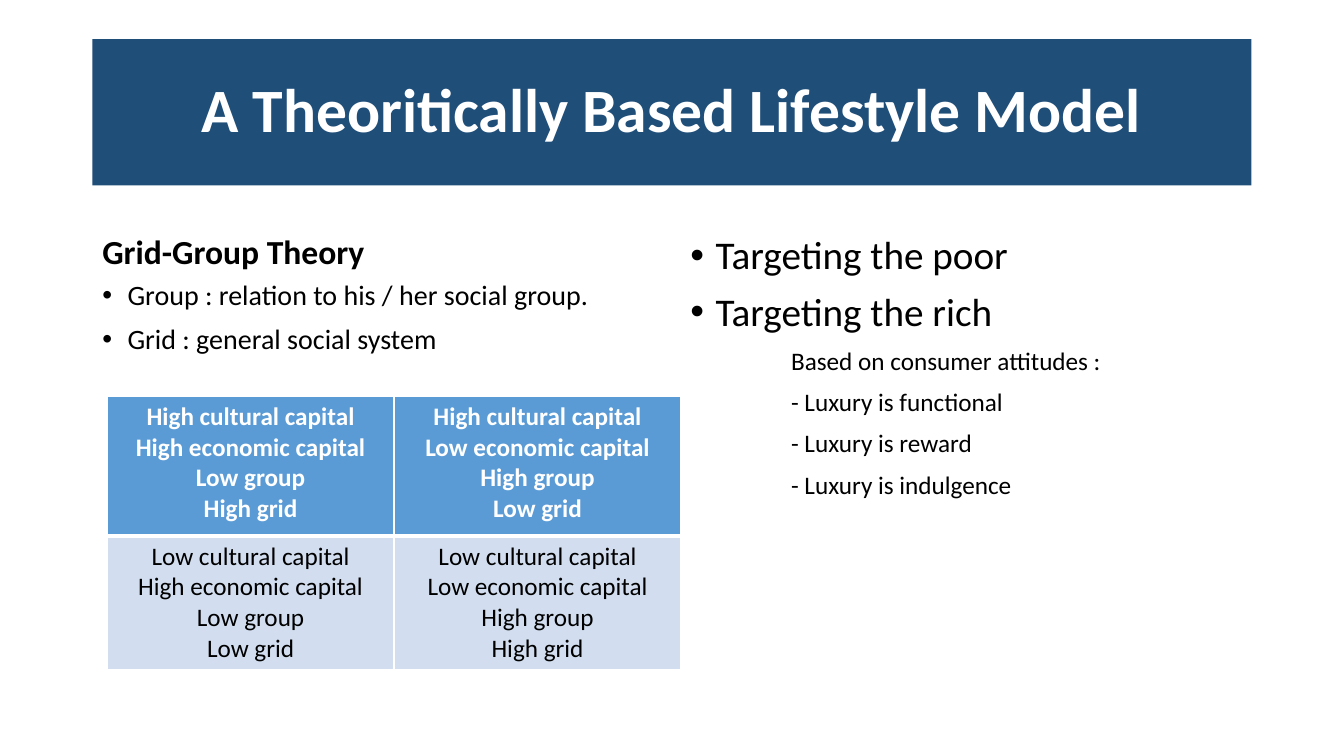
"""Build the lifestyle model slide."""
from dataclasses import dataclass
from typing import NamedTuple

from lxml.etree import SubElement
from pptx import Presentation
from pptx.dml.color import RGBColor
from pptx.enum.shapes import MSO_SHAPE
from pptx.enum.text import MSO_ANCHOR, PP_ALIGN
from pptx.oxml.ns import qn
from pptx.util import Pt


@dataclass(frozen=True)
class Theme:
    """Hold the colours and type sizes."""
    font: str = "Calibri"
    navy: str = "1F4E79"
    blue: str = "5B9BD5"
    pale: str = "D2DEEF"
    white: str = "FFFFFF"
    black: str = "000000"
    title: float = 44
    head: float = 24
    large: float = 28
    body: float = 20
    small: float = 18


class Box(NamedTuple):
    """Place a frame, in points."""
    left: float
    top: float
    width: float
    height: float


class Line(NamedTuple):
    """Describe one paragraph."""
    text: str
    size: float
    color: str = "000000"
    bold: bool = False
    bullet: bool = False
    margin: float = 0
    center: bool = False
    space: float = 10
    lead: float = 0.9


class Block(NamedTuple):
    """Describe one text box."""
    box: Box
    anchor: MSO_ANCHOR
    lines: list[Line]


class Quad(NamedTuple):
    """Describe one cell of the grid."""
    culture: str
    wealth: str
    group: str
    grid: str


THEME = Theme()
TITLE = Line("A Theoritically Based Lifestyle Model", THEME.title,
             THEME.white, True, center=True, space=0)
BANNER = Box(66, 28, 828, 104.5)
BLOCKS = [
    Block(Box(66, 132.5, 406, 65), MSO_ANCHOR.BOTTOM,
          [Line("Grid-Group Theory", THEME.head, bold=True)]),
    Block(Box(66, 197.5, 406, 70.5), MSO_ANCHOR.TOP,
          [Line(text, THEME.body, bullet=True) for text in (
              "Group : relation to his / her social group.",
              "Grid : general social system")]),
    Block(Box(486, 165, 408, 212.5), MSO_ANCHOR.TOP,
          [Line(text, THEME.large, bullet=True) for text in (
              "Targeting the poor", "Targeting the rich")]
          + [Line(text, THEME.small, margin=72) for text in (
              "Based on consumer attitudes :", "- Luxury is functional",
              "- Luxury is reward", "- Luxury is indulgence")]),
]
FRAME = Box(76.5, 283, 410, 195)
ROWS = (100, 95)
QUADS = [
    [Quad("High", "High", "Low", "High"), Quad("High", "Low", "High", "Low")],
    [Quad("Low", "High", "Low", "Low"), Quad("Low", "Low", "High", "High")],
]


def paint(item, color: str) -> None:
    """Give an item a solid fill."""
    item.fill.solid()
    item.fill.fore_color.rgb = RGBColor.from_string(color)


def write(frame, lines: list[Line]) -> None:
    """Write lines into a text frame."""
    frame.word_wrap = True
    for index, line in enumerate(lines):
        para = frame.paragraphs[0] if index == 0 else frame.add_paragraph()
        para.text = line.text
        para.alignment = PP_ALIGN.CENTER if line.center else PP_ALIGN.LEFT
        para.line_spacing = line.lead
        para.space_before = Pt(line.space)
        font = para.font
        font.name, font.size, font.bold = THEME.font, Pt(line.size), line.bold
        font.color.rgb = RGBColor.from_string(line.color)
        props = para._p.get_or_add_pPr()
        props.set("marL", str(Pt(18 if line.bullet else line.margin)))
        props.set("indent", str(Pt(-18 if line.bullet else 0)))
        if line.bullet:
            face = props.makeelement(qn("a:buFont"), {"typeface": "Arial"})
            mark = props.makeelement(qn("a:buChar"), {"char": "•"})
            props.find(qn("a:defRPr")).addprevious(face)
            face.addnext(mark)


def edge(cell, side: str, width: float) -> None:
    """Add a white border to one side of a cell."""
    line = SubElement(cell._tc.get_or_add_tcPr(), qn(f"a:ln{side}"),
                      w=str(Pt(width)))
    fill = SubElement(line, qn("a:solidFill"))
    SubElement(fill, qn("a:srgbClr"), val=THEME.white)


def banner(slide) -> None:
    """Draw the title band."""
    shape = slide.shapes.add_shape(MSO_SHAPE.RECTANGLE, *map(Pt, BANNER))
    shape.shadow.inherit = False
    paint(shape, THEME.navy)
    shape.line.fill.background()
    shape.text_frame.vertical_anchor = MSO_ANCHOR.MIDDLE
    write(shape.text_frame, [TITLE])


def place(slide, block: Block) -> None:
    """Draw one text box."""
    frame = slide.shapes.add_textbox(*map(Pt, block.box)).text_frame
    frame.vertical_anchor = block.anchor
    write(frame, block.lines)


def matrix(slide) -> None:
    """Draw the table of four groups."""
    table = slide.shapes.add_table(2, 2, *map(Pt, FRAME)).table
    table.horz_banding = False
    for row, quads in enumerate(QUADS):
        table.rows[row].height = Pt(ROWS[row])
        top = row == 0
        for col, quad in enumerate(quads):
            cell = table.cell(row, col)
            for side, width in zip("LRTB", (1, 1, 1, 3) if top else (1, 1, 3, 1)):
                edge(cell, side, width)
            paint(cell, THEME.blue if top else THEME.pale)
            color = THEME.white if top else THEME.black
            texts = (f"{quad.culture} cultural capital",
                     f"{quad.wealth} economic capital",
                     f"{quad.group} group", f"{quad.grid} grid")
            write(cell.text_frame,
                  [Line(text, THEME.small, color, top, center=True,
                        space=0, lead=1.0) for text in texts])


def main() -> None:
    """Build and save the deck."""
    deck = Presentation()
    deck.slide_width, deck.slide_height = Pt(960), Pt(540)
    slide = deck.slides.add_slide(deck.slide_layouts[6])
    banner(slide)
    for block in BLOCKS:
        place(slide, block)
    matrix(slide)
    deck.save("out.pptx")


if __name__ == "__main__":
    main()
